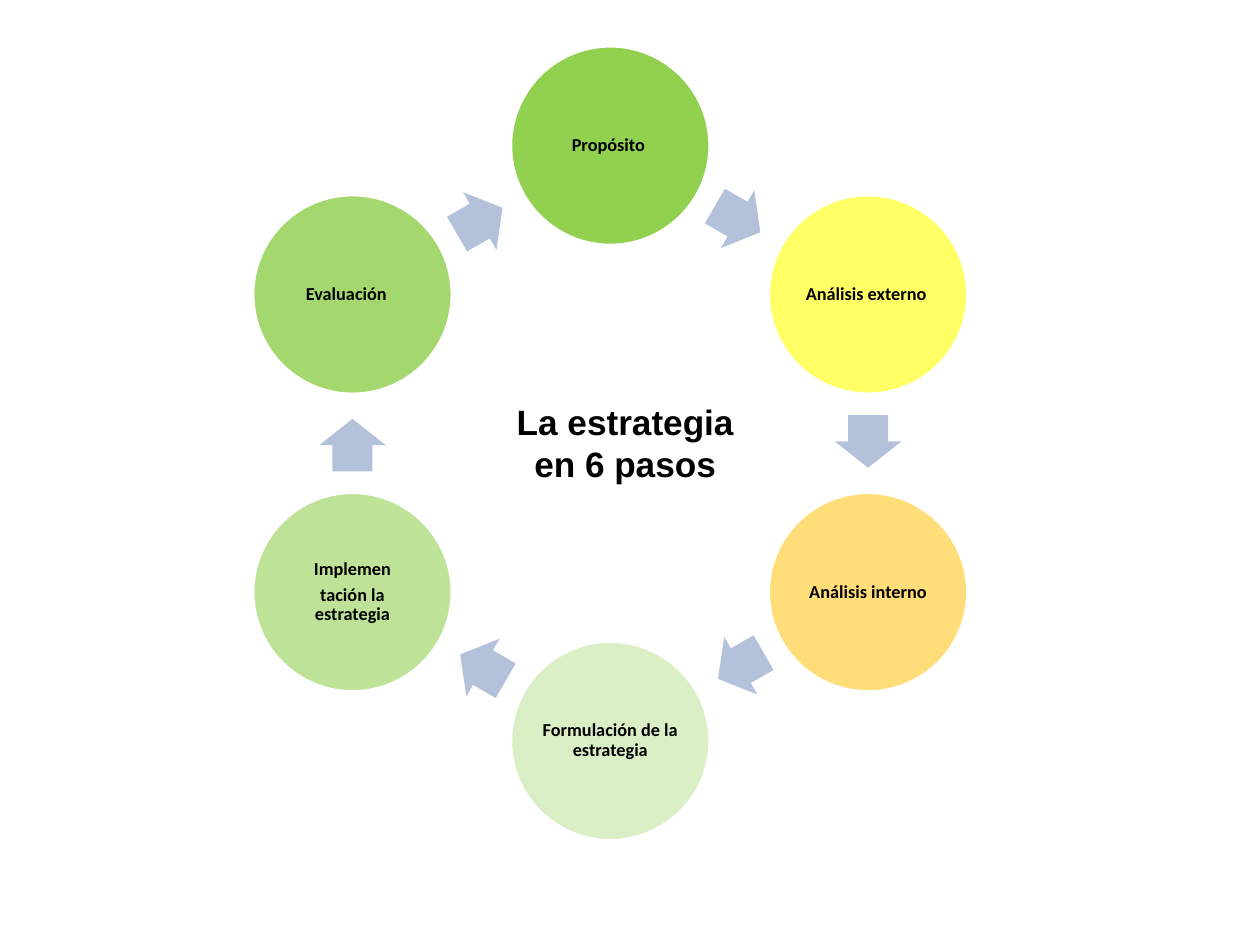
from dataclasses import dataclass
from math import cos, radians, sin

from lxml.etree import SubElement
from pptx import Presentation
from pptx.dml.color import RGBColor as Color
from pptx.enum.shapes import MSO_SHAPE as Preset
from pptx.enum.text import MSO_ANCHOR as Anchor, PP_ALIGN as Align
from pptx.oxml.ns import qn
from pptx.util import Inches, Pt

COLUMN = 0.28
WIDTH, HEIGHT = 48, 36.04
CENTRE_X, CENTRE_Y = 23.25, 16.89
RING, DISC = 11.34, 7.57
ARROW_LENGTH, ARROW_HEIGHT, ARROW_LAG = 2, 2.54, 0.07
MARGIN = Inches(0.02)


@dataclass(frozen=True)
class Theme:
    """Colours, fonts and type sizes of the slide."""
    ink: str = "000000"
    paper: str = "FFFFFF"
    arrow: str = "B3C1DB"
    green: str = "92D050"
    yellow: str = "FFFF66"
    amber: str = "FFC000"
    step_font: str = "Calibri"
    step_size: int = 14
    title_font: str = "Arial"
    title_size: int = 27


@dataclass(frozen=True)
class Step:
    """One step of the cycle: its text, fill, opacity and extra right margin."""
    lines: tuple
    fill: str
    opacity: int = 100
    right: float = 0


THEME = Theme()
STEPS = (
    Step(("Propósito",), THEME.green, right=0.04),
    Step(("Análisis externo",), THEME.yellow, right=0.04),
    Step(("Análisis interno",), THEME.amber, 53),
    Step(("Formulación de la estrategia",), THEME.green, 32),
    Step(("Implemen", "tación la estrategia"), THEME.green, 59),
    Step(("Evaluación",), THEME.green, 83, right=0.13),
)


def grid(*cells):
    """Convert grid cells to slide lengths."""
    return [Inches(cell * COLUMN) for cell in cells]


def apply(target, formats):
    """Set every attribute of the format dict on the target."""
    for name, value in formats.items():
        setattr(target, name, value)


def ring_point(angle, radius):
    """Return the grid point at a clockwise angle from the top of the ring."""
    turn = radians(angle)
    return CENTRE_X + radius * sin(turn), CENTRE_Y - radius * cos(turn)


def add_preset(page, preset, middle, width, height, colour):
    """Add a flat filled shape centred on a grid point."""
    x, y = middle
    shape = page.shapes.add_shape(preset, *grid(x - width / 2, y - height / 2, width, height))
    shape.shadow.inherit = False
    shape.fill.solid()
    shape.fill.fore_color.rgb = Color.from_string(colour)
    return shape


def set_opacity(shape, percent):
    """Make the solid fill of a shape partly transparent."""
    colour = shape.element.spPr.find(qn("a:solidFill")).find(qn("a:srgbClr"))
    SubElement(colour, qn("a:alpha")).set("val", str(percent * 1000))


def write(box, lines, font, size, frame_formats, para_formats):
    """Write bold centred lines into the text frame of a box."""
    frame = box.text_frame
    apply(frame, {"word_wrap": True, **frame_formats})
    frame.text = "\n".join(lines)
    for para in frame.paragraphs:
        apply(para, {"alignment": Align.CENTER, **para_formats})
        for span in para.runs:
            apply(span.font, {"name": font, "size": Pt(size), "bold": True})
            span.font.color.rgb = Color.from_string(THEME.ink)


def add_step(page, step, angle):
    """Add the disc of one step with its text."""
    disc = add_preset(page, Preset.OVAL, ring_point(angle, RING), DISC, DISC, step.fill)
    set_opacity(disc, step.opacity)
    disc.line.color.rgb = Color.from_string(THEME.paper)
    disc.line.width = Pt(2)
    frame_formats = {
        "vertical_anchor": Anchor.MIDDLE,
        "margin_left": MARGIN, "margin_top": MARGIN, "margin_bottom": MARGIN,
        "margin_right": MARGIN + Inches(step.right),
    }
    write(disc, step.lines, THEME.step_font, THEME.step_size, frame_formats,
          {"line_spacing": 0.9, "space_after": Pt(5)})


def add_arrow(page, angle):
    """Add the arrow that leads clockwise at an angle of the ring."""
    x, y = ring_point(angle, RING * cos(radians(30)))
    turn = radians(angle)
    middle = x - ARROW_LAG * cos(turn), y - ARROW_LAG * sin(turn)
    arrow = add_preset(page, Preset.RIGHT_ARROW, middle, ARROW_LENGTH, ARROW_HEIGHT, THEME.arrow)
    arrow.adjustments[0], arrow.adjustments[1] = 0.6, 0.5
    arrow.line.fill.background()
    arrow.rotation = angle


def add_title(page):
    """Add the title in the middle of the ring."""
    box = page.shapes.add_textbox(*grid(18.71, 15, 10.21, 3.71))
    margins = {f"margin_{side}": Inches(size) for side, size in
               (("left", 0.13), ("right", 0.13), ("top", 0.07), ("bottom", 0.07))}
    write(box, ("La estrategia en 6 pasos",), THEME.title_font, THEME.title_size, margins, {})


def main():
    """Build the slide and save the deck."""
    deck = Presentation()
    deck.slide_width, deck.slide_height = grid(WIDTH, HEIGHT)
    page = deck.slides.add_slide(deck.slide_layouts[6])
    sector = 360 / len(STEPS)
    for index, step in enumerate(STEPS):
        add_step(page, step, index * sector)
        add_arrow(page, (index + 0.5) * sector)
    add_title(page)
    deck.save("out.pptx")


if __name__ == "__main__":
    main()
